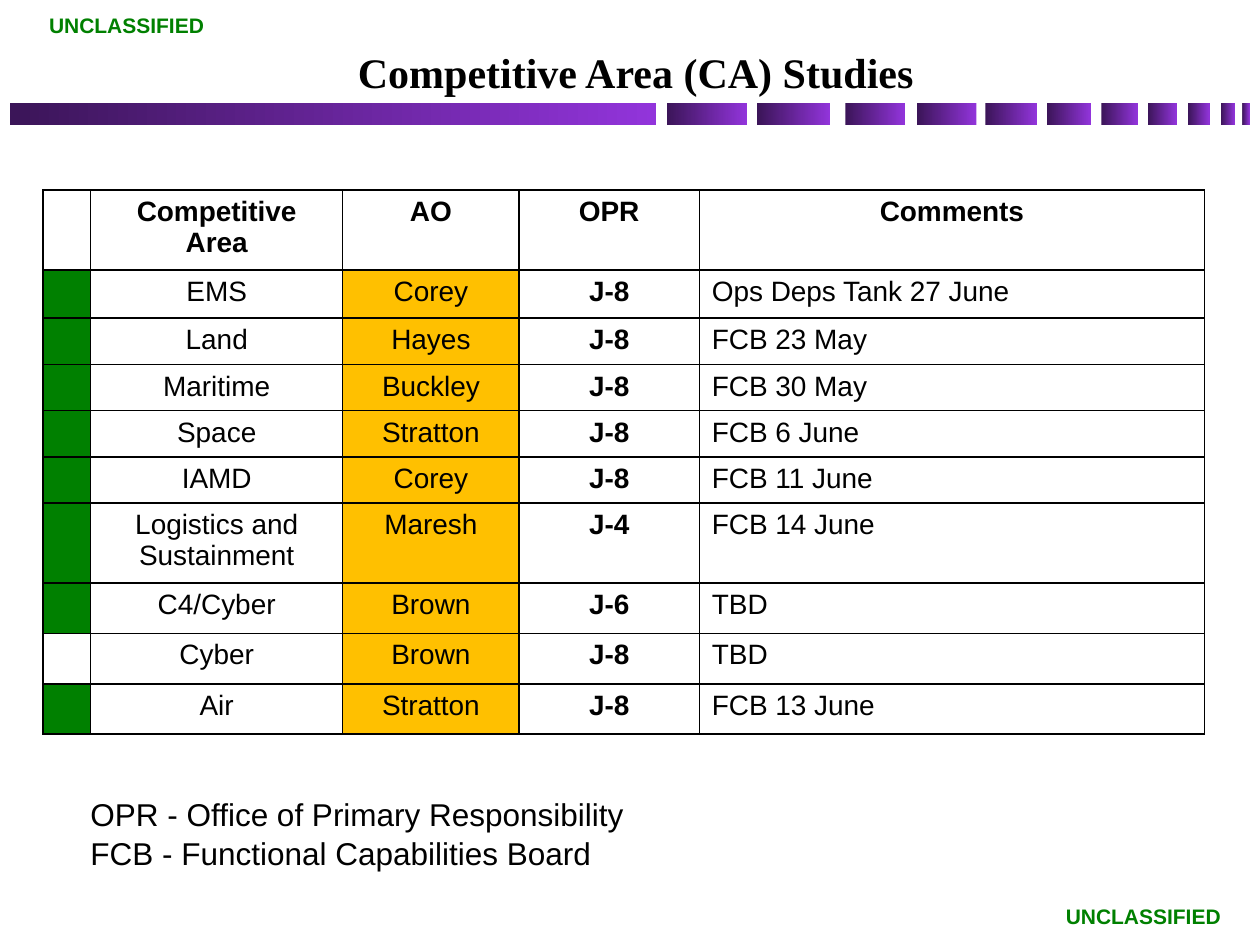
from lxml import etree
from pptx import Presentation
from pptx import util as u
from pptx.dml import color
from pptx.enum import shapes, text
from pptx.oxml import ns

HUES = {"black": "000000", "white": "FFFFFF", "green": "008000",
        "gold": "FFC000", "dark": "3B1558", "light": "9234DB"}
LEFT, MID = text.PP_ALIGN.LEFT, text.PP_ALIGN.CENTER


def rgb(name):
    return color.RGBColor.from_string(HUES[name])


def write(frame, words, size=16, font="Arial", hue="black", bold=False,
          align=MID, inset=None, anchor=text.MSO_ANCHOR.TOP, before=0):
    frame.word_wrap = True
    frame.vertical_anchor = anchor
    if inset is not None:
        frame.margin_left = frame.margin_right = u.Inches(inset)
        frame.margin_top = frame.margin_bottom = u.Inches(inset)
    frame.text = words
    for para in frame.paragraphs:
        para.alignment = align
        para.space_before = u.Pt(before)
        for run in para.runs:
            run.font.size = u.Pt(size)
            run.font.name = font
            run.font.bold = bold
            run.font.color.rgb = rgb(hue)


deck = Presentation()
deck.slide_width, deck.slide_height = u.Inches(10), u.Inches(7.5)
slide = deck.slides.add_slide(deck.slide_layouts[6])
parts = slide.shapes

# Bar that breaks into shrinking blocks
blocks = [(0.08, 5.13), (5.29, 0.64), (6.01, 0.58), (6.71, 0.47),
          (7.28, 0.47), (7.82, 0.41), (8.31, 0.35), (8.74, 0.29),
          (9.11, 0.23), (9.43, 0.17), (9.69, 0.11), (9.86, 0.06)]
for left, width in blocks:
    block = parts.add_shape(shapes.MSO_SHAPE.RECTANGLE, u.Inches(left),
                            u.Inches(0.82), u.Inches(width), u.Inches(0.17))
    block.shadow.inherit = False
    block.line.fill.background()
    block.fill.gradient()
    block.fill.gradient_angle = 0
    for stop, hue in zip(block.fill.gradient_stops, ("dark", "light")):
        stop.color.rgb = rgb(hue)

# Classification marks
for left, top in [(0.09, 0.1), (8.16, 7.17)]:
    mark = parts.add_shape(shapes.MSO_SHAPE.RECTANGLE, u.Inches(left),
                           u.Inches(top), u.Inches(1.83), u.Inches(0.2))
    mark.shadow.inherit = False
    mark.line.fill.background()
    mark.fill.solid()
    mark.fill.fore_color.rgb = rgb("white")
    write(mark.text_frame, "UNCLASSIFIED", size=12, hue="green", bold=True,
          inset=0)

# Title
title = parts.add_textbox(u.Inches(1.57), u.Inches(0.19),
                          u.Inches(6.95), u.Inches(0.75))
write(title.text_frame, "Competitive Area (CA) Studies", size=24,
      font="Times New Roman", bold=True, inset=0.05,
      anchor=text.MSO_ANCHOR.MIDDLE)

# Table of studies: the first column holds only a status colour
rows = [
    ("", "Competitive Area", "AO", "OPR", "Comments"),
    ("", "EMS", "Corey", "J-8", "Ops Deps Tank 27 June"),
    ("", "Land", "Hayes", "J-8", "FCB 23 May"),
    ("", "Maritime", "Buckley", "J-8", "FCB 30 May"),
    ("", "Space", "Stratton", "J-8", "FCB 6 June"),
    ("", "IAMD", "Corey", "J-8", "FCB 11 June"),
    ("", "Logistics and Sustainment", "Maresh", "J-4", "FCB 14 June"),
    ("", "C4/Cyber", "Brown", "J-6", "TBD"),
    ("", "Cyber", "Brown", "J-8", "TBD"),
    ("", "Air", "Stratton", "J-8", "FCB 13 June"),
]
wides = [0.38, 2, 1.4, 1.43, 4.01]
highs = [0.63, 0.38, 0.37, 0.36, 0.36, 0.36, 0.63, 0.4, 0.4, 0.4]
grid = parts.add_table(len(rows), len(wides), u.Inches(0.34), u.Inches(1.51),
                       u.Inches(sum(wides)), u.Inches(sum(highs))).table
grid.first_row = grid.horz_banding = False
for col, wide in zip(grid.columns, wides):
    col.width = u.Inches(wide)
for line, high in zip(grid.rows, highs):
    line.height = u.Inches(high)

for r, row in enumerate(rows):
    for c, words in enumerate(row):
        cell = grid.cell(r, c)
        if words:
            write(cell.text_frame, words, bold=r == 0 or c == 3,
                  align=LEFT if r and c == 4 else MID)
        else:
            cell.margin_top = cell.margin_bottom = 0

        # Borders come before the fill in the cell's XML
        props = cell._tc.get_or_add_tcPr()
        for side in ("lnL", "lnR", "lnT", "lnB"):
            edge = etree.SubElement(props, ns.qn("a:" + side),
                                    w=str(u.Pt(1)))
            paint = etree.SubElement(edge, ns.qn("a:solidFill"))
            etree.SubElement(paint, ns.qn("a:srgbClr"), val=HUES["black"])

        hue = "white"
        if r and c == 2:
            hue = "gold"
        elif r and c == 0 and row[1] != "Cyber":
            hue = "green"
        cell.fill.solid()
        cell.fill.fore_color.rgb = rgb(hue)

# Key to the short forms
key = parts.add_textbox(u.Inches(0.62), u.Inches(6.26),
                        u.Inches(6.3), u.Inches(1.01))
write(key.text_frame, "OPR - Office of Primary Responsibility\n"
      "FCB - Functional Capabilities Board", size=18, align=LEFT, before=1)

deck.save("out.pptx")
